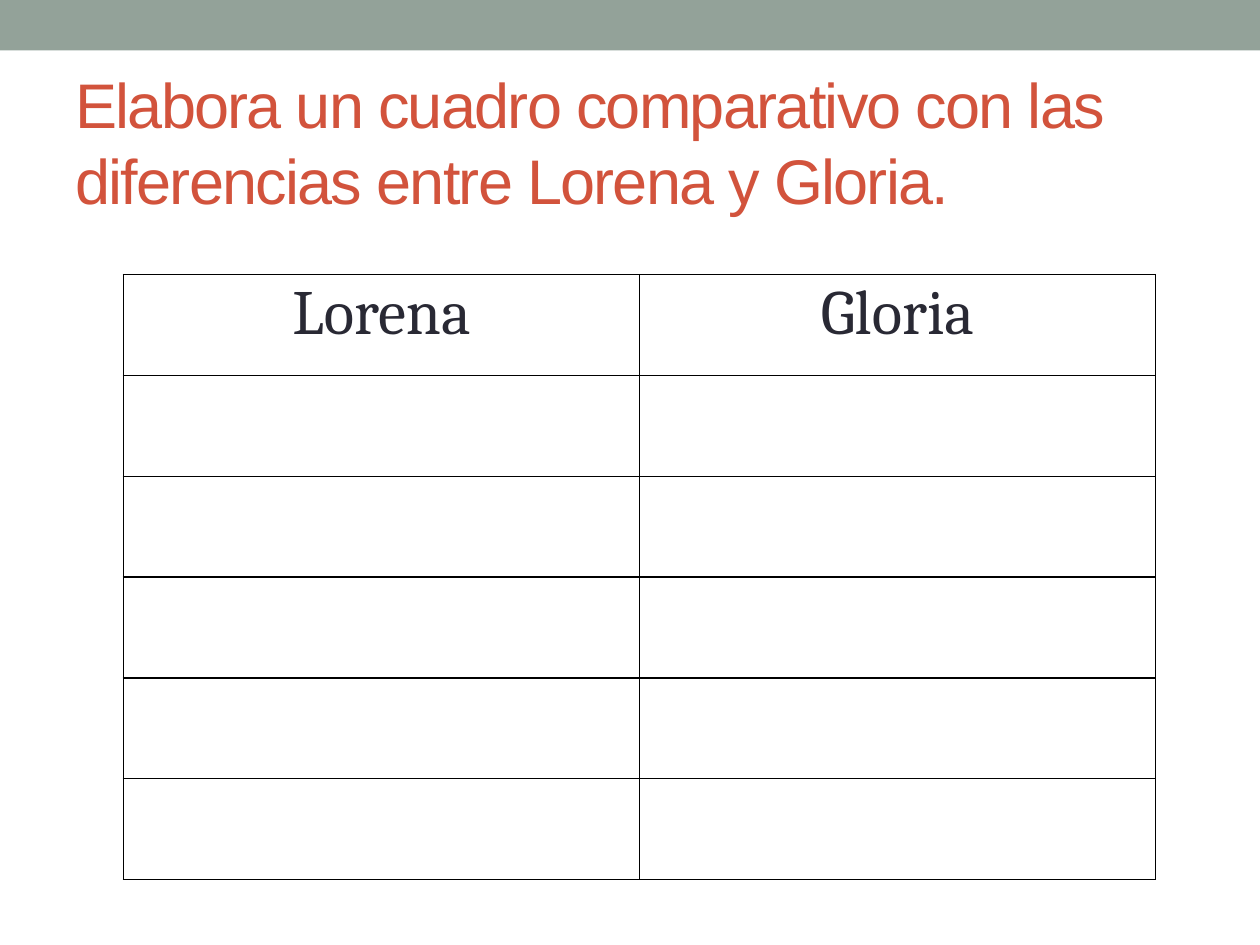
from lxml import etree
from pptx import Presentation
from pptx.dml.color import RGBColor
from pptx.enum.shapes import MSO_SHAPE
from pptx.enum.text import MSO_ANCHOR, PP_ALIGN
from pptx.oxml.ns import qn
from pptx.util import Inches, Pt

RECT = MSO_SHAPE.RECTANGLE
MIDDLE = MSO_ANCHOR.MIDDLE
CENTER = PP_ALIGN.CENTER

TITLE = "Elabora un cuadro comparativo con las diferencias entre Lorena y Gloria."
NAMES = ["Lorena", "Gloria"]
BLANK_ROWS = 5

THEME = {
    "band": "93A299", "title": "D2533C", "text": "292934", "line": "000000",
    "head_font": "Arial", "body_font": "Cambria",
    "size": 36, "track": -1, "border": 1,
}
SLIDE = (10, 7.5)
BAND = (0, 0, 10, 0.4)
HEAD = (0.5, 0.58, 9, 1.08)
GRID = (0.98, 2.18, 8.19, 4.8)


def box(area):
    return [Inches(n) for n in area]


def add_run(para, text, font, color):
    run = para.add_run()
    run.text = text
    run.font.name = font
    run.font.size = Pt(THEME["size"])
    run.font.color.rgb = RGBColor.from_string(color)
    return run


def add_band(slide):
    band = slide.shapes.add_shape(RECT, *box(BAND))
    band.shadow.inherit = False
    band.fill.solid()
    band.fill.fore_color.rgb = RGBColor.from_string(THEME["band"])
    band.line.fill.background()


def add_title(slide):
    frame = slide.shapes.add_textbox(*box(HEAD)).text_frame
    frame.word_wrap = True
    frame.vertical_anchor = MIDDLE
    run = add_run(frame.paragraphs[0], TITLE, THEME["head_font"], THEME["title"])
    run.font._element.set("spc", str(THEME["track"] * 100))


def set_border(cell):
    """Draw all four sides; lines must come before the fill in tcPr."""
    props = cell._tc.get_or_add_tcPr()
    for spot, side in enumerate(("lnL", "lnR", "lnT", "lnB")):
        line = etree.Element(qn("a:" + side), w=str(Pt(THEME["border"])))
        fill = etree.SubElement(line, qn("a:solidFill"))
        etree.SubElement(fill, qn("a:srgbClr"), val=THEME["line"])
        props.insert(spot, line)


def add_name(cell, name):
    cell.margin_left = cell.margin_right = Inches(0.07)
    cell.margin_top = cell.margin_bottom = 0
    para = cell.text_frame.paragraphs[0]
    para.alignment = CENTER
    para.line_spacing = 1.05
    para.space_after = Pt(10)
    add_run(para, name, THEME["body_font"], THEME["text"])


def add_grid(slide):
    rows, cols = BLANK_ROWS + 1, len(NAMES)
    table = slide.shapes.add_table(rows, cols, *box(GRID)).table
    table.first_row = table.horz_banding = False
    for cell in table.iter_cells():
        cell.fill.background()
        set_border(cell)
    for col, name in enumerate(NAMES):
        add_name(table.cell(0, col), name)


def main():
    deck = Presentation()
    deck.slide_width, deck.slide_height = box(SLIDE)
    slide = deck.slides.add_slide(deck.slide_layouts[6])
    add_band(slide)
    add_title(slide)
    add_grid(slide)
    deck.save("out.pptx")


if __name__ == "__main__":
    main()
